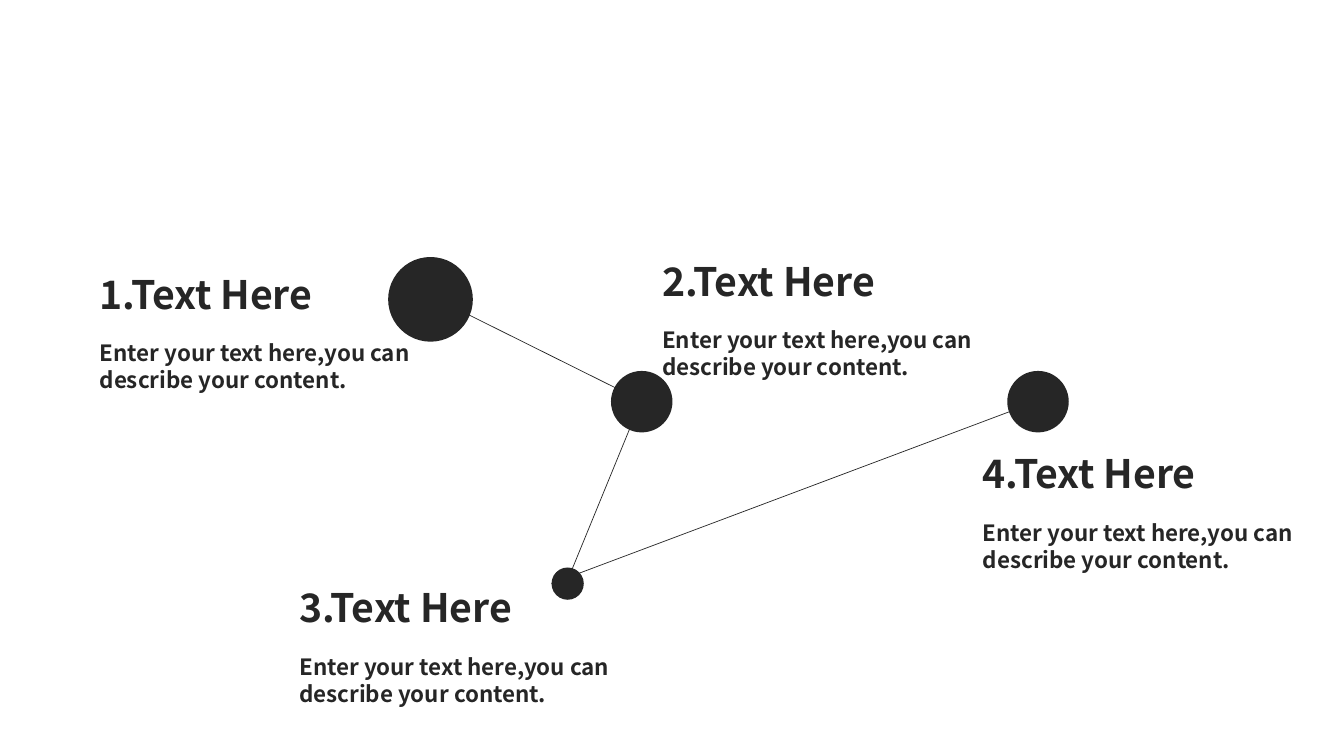
import dataclasses

import lxml.etree
import pptx
import pptx.dml.color
import pptx.enum.shapes
import pptx.enum.text
import pptx.oxml.ns
import pptx.slide
import pptx.util

Inches = pptx.util.Inches
INK = pptx.dml.color.RGBColor(0x26, 0x26, 0x26)
FONT = "Noto Sans CJK SC"
BODY = "Enter your text here,you can describe your content."


@dataclasses.dataclass
class Dot:
    left: float
    top: float
    size: float


@dataclasses.dataclass
class Link:
    x1: float
    y1: float
    x2: float
    y2: float


@dataclasses.dataclass
class Note:
    head: str
    left: float
    top: float


DOTS = [
    Dot(3.85, 2.55, 0.84),
    Dot(6.06, 3.68, 0.61),
    Dot(5.47, 5.63, 0.32),
    Dot(9.99, 3.68, 0.61),
]
LINKS = [
    Link(4.24, 2.92, 6.35, 3.97),
    Link(5.62, 5.78, 6.37, 3.95),
    Link(5.47, 5.79, 10.37, 3.95),
]
NOTES = [
    Note("1.Text Here", 0.89, 2.63),
    Note("2.Text Here", 6.47, 2.5),
    Note("4.Text Here", 9.65, 4.41),
    Note("3.Text Here", 2.87, 5.74),
]


def add_dot(slide: pptx.slide.Slide, dot: Dot) -> None:
    shape = slide.shapes.add_shape(
        pptx.enum.shapes.MSO_SHAPE.OVAL,
        Inches(dot.left), Inches(dot.top), Inches(dot.size), Inches(dot.size),
    )
    shape.shadow.inherit = False
    shape.fill.solid()
    shape.fill.fore_color.rgb = INK
    shape.line.fill.background()


def add_link(slide: pptx.slide.Slide, link: Link) -> None:
    line = slide.shapes.add_connector(
        pptx.enum.shapes.MSO_CONNECTOR.STRAIGHT,
        Inches(link.x1), Inches(link.y1), Inches(link.x2), Inches(link.y2),
    )
    line.line.color.rgb = INK
    line.line.width = pptx.util.Pt(0.5)
    props = line._element.spPr
    lxml.etree.SubElement(props, pptx.oxml.ns.qn("a:effectLst"))


def add_text(slide: pptx.slide.Slide, text: str, left: float, top: float,
             width: float, height: float, size: int) -> None:
    box = slide.shapes.add_textbox(
        Inches(left), Inches(top), Inches(width), Inches(height))
    frame = box.text_frame
    frame.word_wrap = True
    frame.auto_size = pptx.enum.text.MSO_AUTO_SIZE.SHAPE_TO_FIT_TEXT
    run = frame.paragraphs[0].add_run()
    run.text = text
    font = run.font
    font.name = FONT
    font.size = pptx.util.Pt(size)
    font.bold = True
    font.color.rgb = INK


def add_note(slide: pptx.slide.Slide, note: Note) -> None:
    add_text(slide, note.head, note.left, note.top, 3.22, 0.57, 28)
    add_text(slide, BODY, note.left, note.top + 0.69, 3.82, 0.64, 16)


def main() -> None:
    deck = pptx.Presentation()
    deck.slide_width = Inches(13.33)
    deck.slide_height = Inches(7.5)
    slide = deck.slides.add_slide(deck.slide_layouts[6])

    # Dots and the lines between them
    for dot in DOTS:
        add_dot(slide, dot)
    for link in LINKS:
        add_link(slide, link)

    # Numbered notes
    for note in NOTES:
        add_note(slide, note)

    deck.save("out.pptx")


if __name__ == "__main__":
    main()
